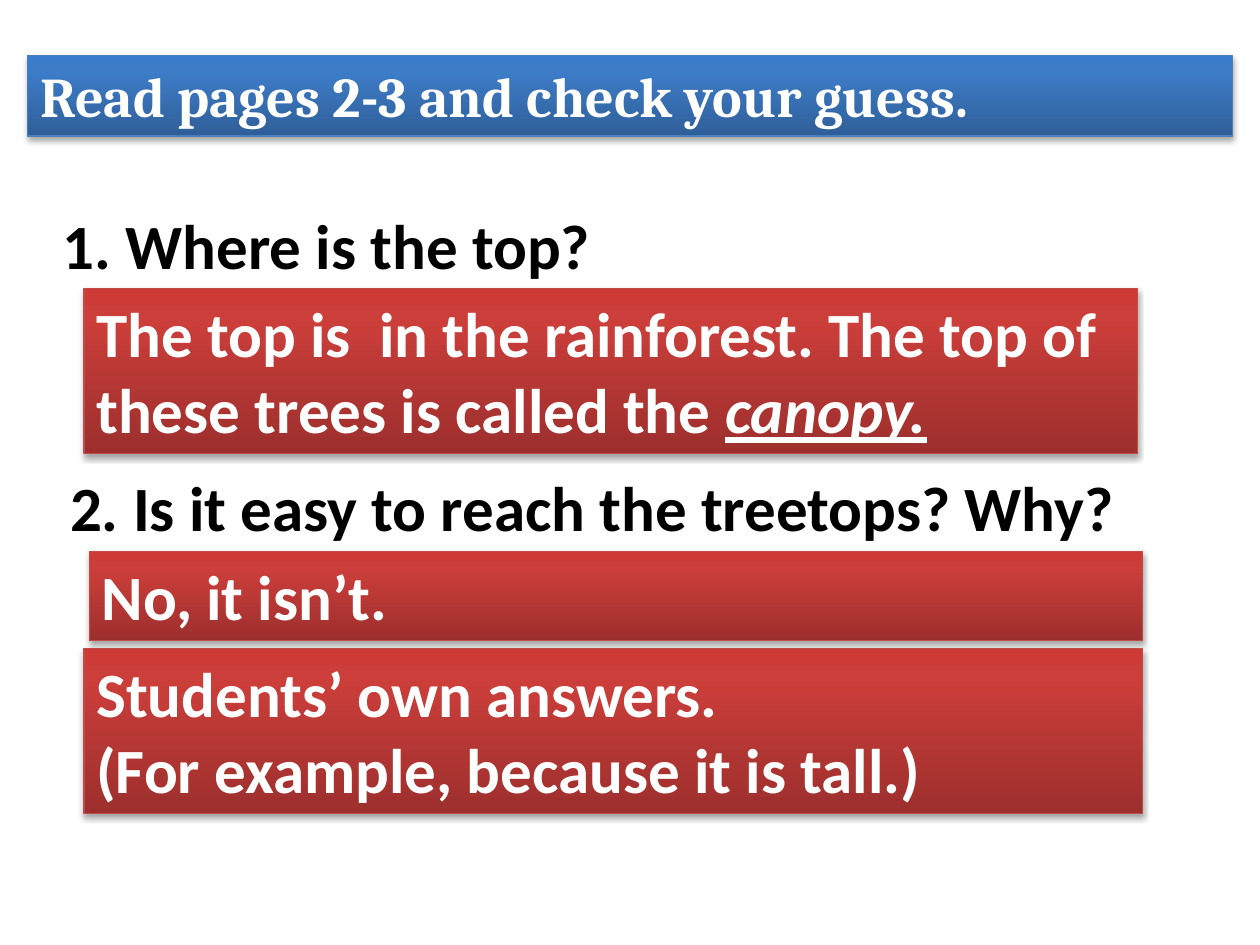
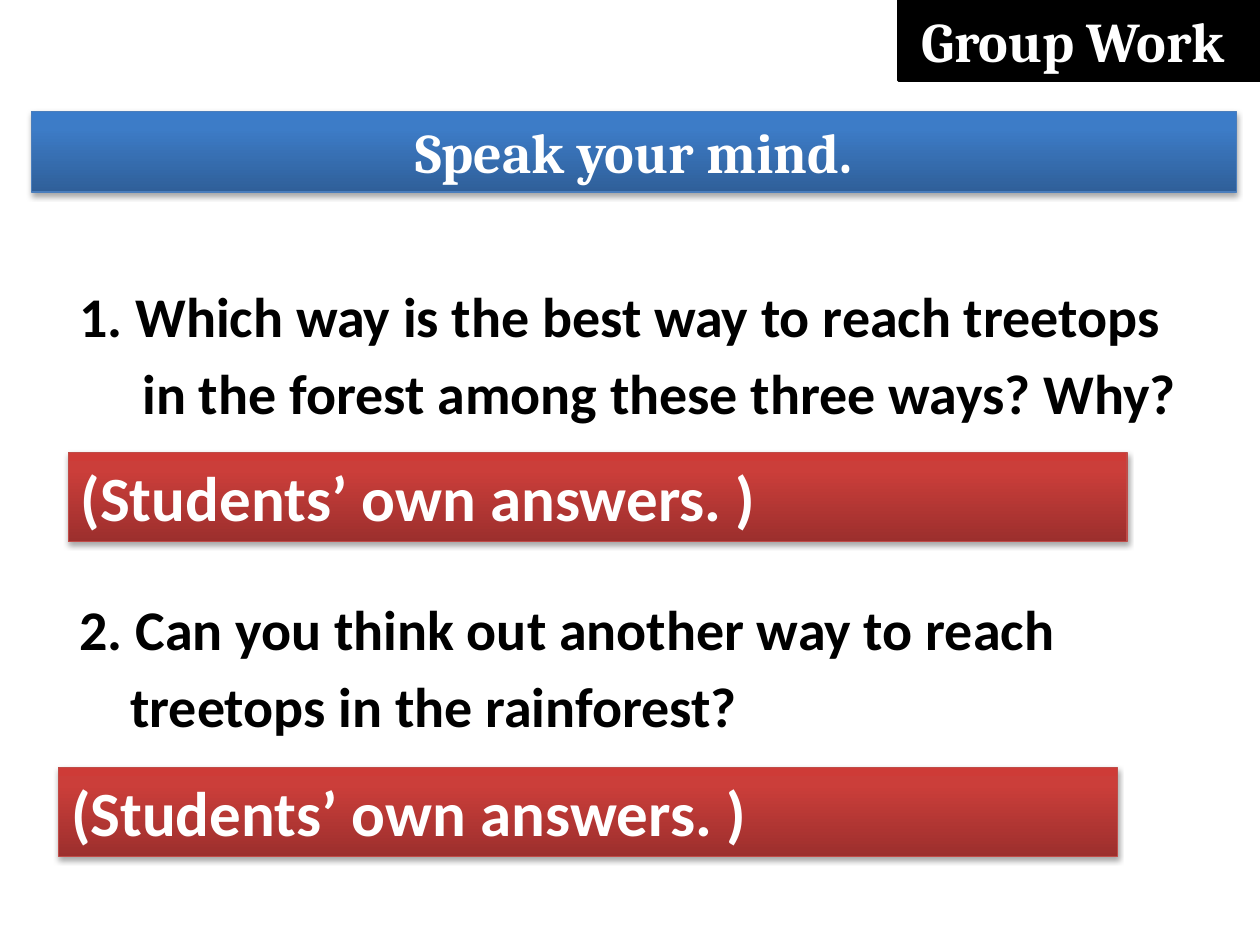
"""Build two reading-lesson slides with banners, questions and answer bars."""
from dataclasses import dataclass
from typing import NamedTuple

import lxml.etree
import pptx
import pptx.dml.color
import pptx.enum.shapes
import pptx.enum.text
import pptx.oxml.ns
import pptx.util

Pt = pptx.util.Pt
qn = pptx.oxml.ns.qn
Align = pptx.enum.text.PP_ALIGN
WHITE, BLACK = "FFFFFF", "000000"
HEAD_FONT, TEXT_FONT = "Cambria", "Calibri"


class Run(NamedTuple):
    text: str
    stress: bool = False


class Box(NamedTuple):
    left: float
    top: float
    width: float
    height: float


@dataclass(frozen=True)
class Line:
    runs: tuple[Run, ...]
    indent: float = 0
    before: float = 0


@dataclass(frozen=True)
class Type:
    font: str
    size: float
    color: str
    align: Align = Align.LEFT


@dataclass(frozen=True)
class Skin:
    low: str
    mid: str
    high: str
    edge: str


@dataclass(frozen=True)
class Bar:
    box: Box
    lines: tuple[Line, ...]


BLUE = Skin("2F5F99", "3D7CC7", "3A7CCB", "4B7EBC")
RED = Skin("9C2F2D", "CB3E3A", "CE3B37", "BF4C48")
HEAD = Type(HEAD_FONT, 32, WHITE)
HEAD_MID = Type(HEAD_FONT, 32, WHITE, Align.CENTER)
ASK = Type(TEXT_FONT, 36, BLACK)
ASK_LIST = Type(TEXT_FONT, 32, BLACK)
REPLY = Type(TEXT_FONT, 36, WHITE)


def tint(code: str) -> pptx.dml.color.RGBColor:
    return pptx.dml.color.RGBColor.from_string(code)


def plain(text: str, indent: float = 0, before: float = 0) -> Line:
    return Line((Run(text),), indent, before)


def place(shape, box: Box) -> None:
    shape.left, shape.top, shape.width, shape.height = map(Pt, box)


def write(shape, lines: tuple[Line, ...], style: Type) -> None:
    frame = shape.text_frame
    frame.word_wrap = True
    frame.auto_size = pptx.enum.text.MSO_AUTO_SIZE.NONE
    frame.vertical_anchor = pptx.enum.text.MSO_ANCHOR.TOP
    for count, line in enumerate(lines):
        para = frame.add_paragraph() if count else frame.paragraphs[0]
        para.alignment = style.align
        para.space_before = Pt(line.before)
        props = para._p.get_or_add_pPr()
        props.set("marL", str(Pt(line.indent)))
        props.set("indent", "0")
        lxml.etree.SubElement(props, qn("a:buNone"))
        for part in line.runs:
            run = para.add_run()
            run.text = part.text
            font = run.font
            font.name, font.size, font.bold = style.font, Pt(style.size), True
            font.color.rgb = tint(style.color)
            if part.stress:
                font.italic = font.underline = True


def add_stop(parent, tag: str, code: str, **attrs: str):
    node = lxml.etree.SubElement(parent, qn(tag), attrs)
    return lxml.etree.SubElement(node, qn("a:srgbClr"), val=code)


def gloss(shape, skin: Skin) -> None:
    shape.fill.gradient()
    shape.fill.gradient_angle = 90
    stops = shape.element.spPr.find(".//" + qn("a:gsLst"))
    stops.clear()
    for spot, code in ((0, skin.low), (80, skin.mid), (100, skin.high)):
        add_stop(stops, "a:gs", code, pos=str(spot * 1000))
    shape.line.color.rgb = tint(skin.edge)
    shape.line.width = Pt(0.75)
    shape.shadow.inherit = False
    glow = shape.element.spPr.find(qn("a:effectLst"))
    shade = add_stop(glow, "a:outerShdw", BLACK, blurRad=str(Pt(3.1)),
                     dist=str(Pt(1.8)), dir="5400000", rotWithShape="0")
    lxml.etree.SubElement(shade, qn("a:alpha"), val="35000")


def add_rect(slide, box: Box):
    kind = pptx.enum.shapes.MSO_SHAPE.RECTANGLE
    return slide.shapes.add_shape(kind, *map(Pt, box))


def add_head(slide, left: float, top: float, text: str, style: Type) -> None:
    head = slide.shapes.title
    place(head, Box(left, top, 688.5, 46))
    gloss(head, BLUE)
    write(head, (plain(text),), style)


def add_bar(slide, bar: Bar) -> None:
    rect = add_rect(slide, bar.box)
    gloss(rect, RED)
    write(rect, bar.lines, REPLY)


def add_ask(slide, box: Box, text: str) -> None:
    write(slide.shapes.add_textbox(*map(Pt, box)), (plain(text),), ASK)


def add_badge(slide, text: str) -> None:
    badge = add_rect(slide, Box(513.4, 0, 206.6, 46))
    badge.fill.solid()
    badge.fill.fore_color.rgb = tint(BLACK)
    badge.line.color.rgb = tint(BLACK)
    badge.line.width = Pt(2)
    badge.shadow.inherit = False
    write(badge, (plain(text),), HEAD_MID)


def build_check(deck) -> None:
    slide = deck.slides.add_slide(deck.slide_layouts[5])
    add_head(slide, 15.8, 31.7, "Read pages 2-3 and check your guess.", HEAD)
    add_ask(slide, Box(28.8, 114.5, 646.5, 51), "1. Where is the top?")
    add_ask(slide, Box(33, 264.2, 617, 51),
            "2. Is it easy to reach the treetops? Why?")
    top = Line((
        Run("The top is  in the rainforest. The top of these trees is called the "),
        Run("canopy.", True),
    ))
    own = (plain("Students’ own answers."),
           plain("(For example, because it is tall.)"))
    for bar in (
        Bar(Box(48, 164.9, 602, 94.5), (top,)),
        Bar(Box(51, 315.2, 602, 51), (plain("No, it isn’t."),)),
        Bar(Box(48, 370.6, 605, 94.5), own),
    ):
        add_bar(slide, bar)


def build_speak(deck) -> None:
    slide = deck.slides.add_slide(deck.slide_layouts[1])
    add_head(slide, 18, 63.8, "Speak your mind.", HEAD_MID)
    body = slide.placeholders[1]
    place(body, Box(38.2, 157, 648, 356.4))
    write(body, (
        plain("1. Which way is the best way to reach treetops"),
        plain("in the forest among these three ways? Why?", 36, 6),
        plain("2. Can you think out another way to reach", 0, 96),
        plain("treetops in the rainforest?", 29, 6),
    ), ASK_LIST)
    add_badge(slide, "Group Work ")
    for left, top in ((39, 258.5), (33.5, 438.5)):
        add_bar(slide, Bar(Box(left, top, 605, 51),
                           (plain("(Students’ own answers. )"),)))


def main() -> None:
    deck = pptx.Presentation()
    deck.slide_width, deck.slide_height = Pt(720), Pt(540)
    build_check(deck)
    build_speak(deck)
    deck.save("out.pptx")


if __name__ == "__main__":
    main()
